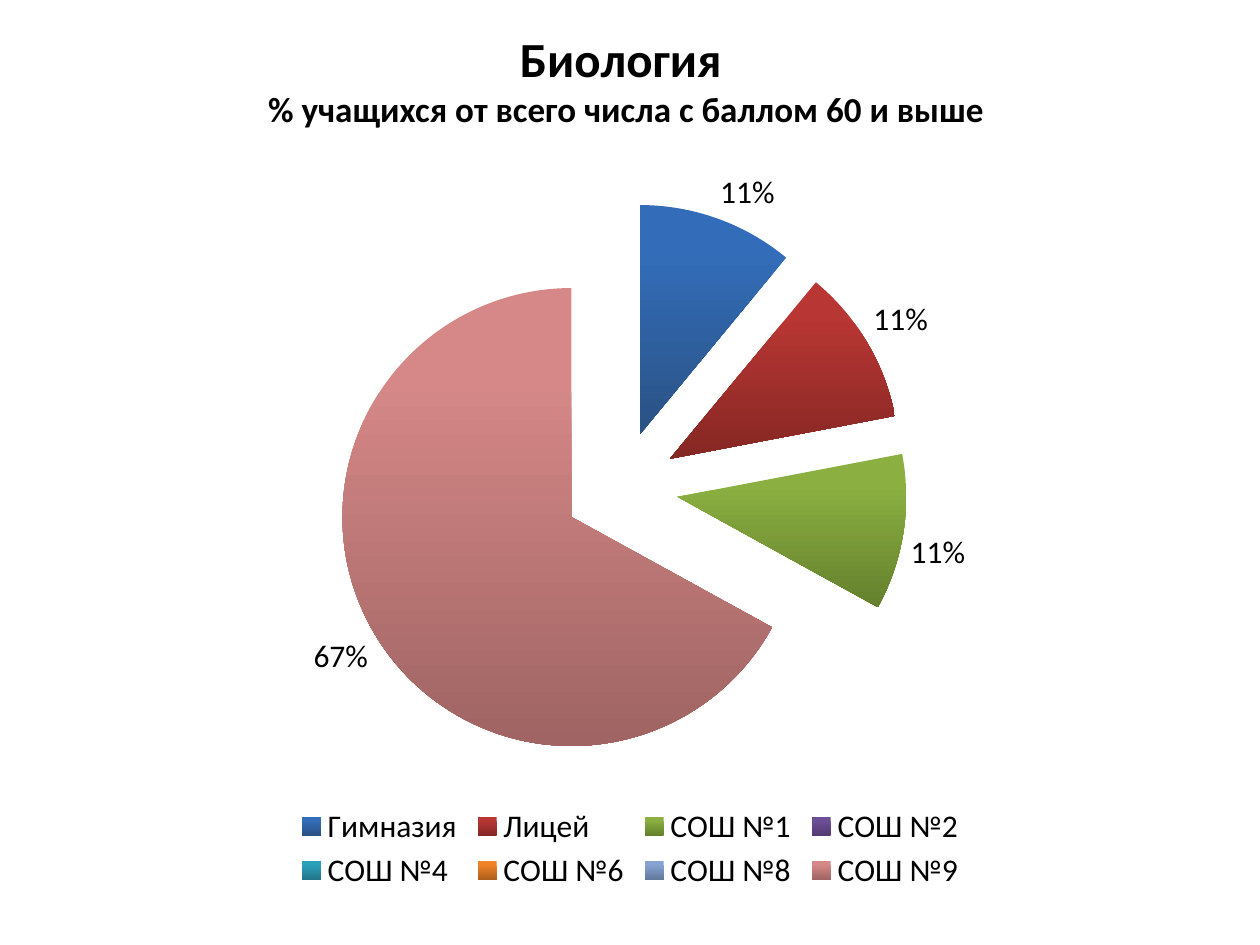
from typing import Any, NamedTuple

import pptx
import pptx.chart.data
import pptx.dml.color
import pptx.enum.chart
import pptx.enum.text
import pptx.oxml
import pptx.util
from pptx.oxml.ns import nsdecls

WIDTH, HEIGHT = 10, 7.5
FONT = "Calibri"
BLACK = "000000"
EXPLOSION = 25


class School(NamedTuple):
    name: str
    percent: int | None
    top_color: str
    bottom_color: str


class TitleLine(NamedTuple):
    text: str
    size: int


SCHOOLS = [
    School("Гимназия", 11, "336DB9", "2A5284"),
    School("Лицей", 11, "B83633", "852723"),
    School("СОШ №1", 11, "8BB041", "64802D"),
    School("СОШ №2", None, "6D4F96", "533B72"),
    School("СОШ №4", None, "2CA1BD", "237488"),
    School("СОШ №6", None, "F08228", "AF5F1B"),
    School("СОШ №8", None, "86A3D2", "63789C"),
    School("СОШ №9", 67, "D58887", "9F6463"),
]
TITLE_LINES = [
    TitleLine("Биология ", 28),
    TitleLine("% учащихся от всего числа с баллом 60 и выше", 20),
]


def color(value: str) -> pptx.dml.color.RGBColor:
    return pptx.dml.color.RGBColor.from_string(value)


def share_box(left: float, top: float, width: float, height: float) -> list[int]:
    """Turn shares of the slide's size into lengths."""
    return [pptx.util.Inches(share * size) for share, size in
            zip((left, top, width, height), (WIDTH, HEIGHT) * 2)]


def format_font(font: Any, **values: Any) -> None:
    for name, value in {"name": FONT, **values}.items():
        setattr(font, name, value)
    font.color.rgb = color(BLACK)


def write_title(title: Any, lines: list[TitleLine]) -> None:
    box = share_box(0.047, 0, 0.9, 1 / 6)
    for name, value in zip(("left", "top", "width", "height"), box):
        setattr(title, name, value)
    frame = title.text_frame
    frame.vertical_anchor = pptx.enum.text.MSO_ANCHOR.MIDDLE
    paragraph = frame.paragraphs[0]
    paragraph.alignment = pptx.enum.text.PP_ALIGN.CENTER
    for index, line in enumerate(lines):
        if index:
            paragraph.add_line_break()
        run = paragraph.add_run()
        run.text = line.text
        format_font(run.font, size=pptx.util.Pt(line.size), bold=True)


def fill_slice(point: Any, school: School) -> None:
    fill = point.format.fill
    fill.gradient()
    fill.gradient_angle = 270
    stops = zip(fill.gradient_stops, (0.2, 1), (school.top_color, school.bottom_color))
    for stop, position, value in stops:
        stop.position = position
        stop.color.rgb = color(value)
    point.format.line.fill.background()


def explode(series: Any) -> None:
    """Move all slices apart; the points must be formatted before."""
    explosion = pptx.oxml.parse_xml(
        f'<c:explosion {nsdecls("c")} val="{EXPLOSION}"/>')
    series._element.xpath("c:dPt")[0].addprevious(explosion)


def add_school_pie(slide: Any, schools: list[School]) -> None:
    data = pptx.chart.data.CategoryChartData()
    data.categories = [school.name for school in schools]
    data.add_series("Series 1", [school.percent for school in schools])
    chart = slide.shapes.add_chart(
        pptx.enum.chart.XL_CHART_TYPE.PIE,
        *share_box(0.047, 0.156, 0.906, 0.792), data).chart
    format_font(chart.font, size=pptx.util.Pt(18))
    chart.has_title = False
    chart.has_legend = True
    chart.legend.position = pptx.enum.chart.XL_LEGEND_POSITION.BOTTOM
    chart.legend.include_in_layout = False

    plot = chart.plots[0]
    plot.vary_by_categories = True
    series = plot.series[0]
    for index, school in enumerate(schools):
        fill_slice(series.points[index], school)
    explode(series)

    label_format = {
        "show_percentage": True,
        "show_value": False,
        "number_format": "0%",
        "number_format_is_linked": False,
        "position": pptx.enum.chart.XL_LABEL_POSITION.OUTSIDE_END,
    }
    for name, value in label_format.items():
        setattr(series.data_labels, name, value)


def main() -> None:
    presentation = pptx.Presentation()
    presentation.slide_width = pptx.util.Inches(WIDTH)
    presentation.slide_height = pptx.util.Inches(HEIGHT)
    title_only = presentation.slide_layouts.get_by_name("Title Only")
    slide = presentation.slides.add_slide(title_only)
    write_title(slide.shapes.title, TITLE_LINES)
    add_school_pie(slide, SCHOOLS)
    presentation.save("out.pptx")


if __name__ == "__main__":
    main()
